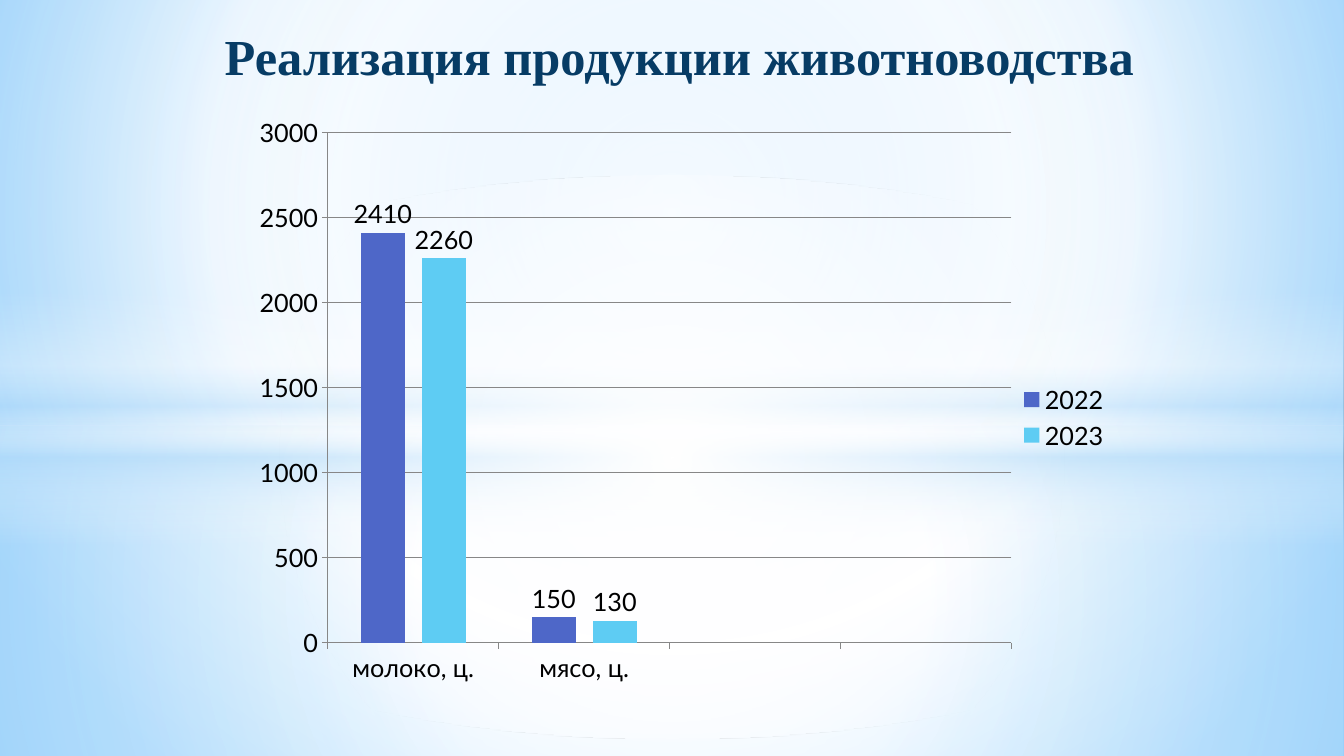
from lxml import etree
from pptx import Presentation
from pptx import util as u
from pptx.chart.data import CategoryChartData
from pptx.dml.color import RGBColor
from pptx.enum import chart as ch, shapes, text
from pptx.oxml import parse_xml
from pptx.oxml.ns import nsdecls, qn

SCALE = 914400 / 100.8
WIDE, HIGH = 1344, 756
NAVY = RGBColor(0x07, 0x3C, 0x65)
BLACK = RGBColor(0, 0, 0)
GRAY = RGBColor(0x87, 0x87, 0x87)
BLUE = RGBColor(0x4E, 0x67, 0xC8)
CYAN = RGBColor(0x5E, 0xCC, 0xF3)
WHITE = RGBColor(0xFF, 0xFF, 0xFF)
PALE = RGBColor(0xB4, 0xDC, 0xFA)
SKY = RGBColor(0x9E, 0xD5, 0xFF)
DEEP = RGBColor(0x5B, 0xB9, 0xFF)
MIDDLE = (50, 50, 50, 50)


def px(n):
    return u.Emu(round(n * SCALE))


def place(box):
    return [px(n) for n in box]


def blend(holder, stops, focus=None):
    marks = "".join(
        f'<a:gs pos="{pos * 1000}"><a:srgbClr val="{color}">'
        f'<a:alpha val="{alpha * 1000}"/></a:srgbClr></a:gs>'
        for pos, color, alpha in stops)
    if focus:
        sides = " ".join(f'{side}="{n * 1000}"' for side, n in zip("ltrb", focus))
        way = f'<a:path path="circle"><a:fillToRect {sides}/></a:path>'
    else:
        way = '<a:lin ang="5400000" scaled="0"/>'
    fill = parse_xml(f'<a:gradFill {nsdecls("a")} rotWithShape="1">'
                     f'<a:gsLst>{marks}</a:gsLst>{way}</a:gradFill>')
    holder.replace(holder.find(qn("a:solidFill")), fill)


def glow(slide, kind, box, stops, focus=None):
    shape = slide.shapes.add_shape(kind, *place(box))
    shape.shadow.inherit = False
    shape.line.fill.background()
    shape.fill.solid()
    blend(shape.element.spPr, stops, focus)


def scene(slide, box):
    left, top, width, height = box
    slide.background.fill.solid()
    base = slide.element.xpath(".//p:bgPr")[0]
    blend(base, [(0, SKY, 100), (60, WHITE, 100), (100, DEEP, 100)], (20, 10, 20, 60))
    rect, oval = shapes.MSO_SHAPE.RECTANGLE, shapes.MSO_SHAPE.OVAL
    split = 426
    glow(slide, rect, (left, top + split, width, height - split),
         [(0, WHITE, 92), (37, WHITE, 77), (100, PALE, 80)], MIDDLE)
    glow(slide, rect, (left, top, width, split),
         [(0, WHITE, 90), (48, WHITE, 63), (100, PALE, 80)], MIDDLE)
    glow(slide, rect, (left, top + 292, width, 252),
         [(0, WHITE, 0), (29, WHITE, 30), (45, PALE, 40),
          (55, WHITE, 26), (65, PALE, 60), (100, WHITE, 0)])
    glow(slide, oval, (left, top + 176, width, 563),
         [(0, WHITE, 100), (54, WHITE, 0)], MIDDLE)


def heading(slide, box):
    title = slide.shapes.title
    title.left, title.top, title.width, title.height = place(box)
    frame = title.text_frame
    frame.text = "Реализация продукции животноводства"
    frame.word_wrap = True
    frame.auto_size = text.MSO_AUTO_SIZE.SHAPE_TO_FIT_TEXT
    line = frame.paragraphs[0]
    line.alignment = text.PP_ALIGN.CENTER
    font = line.runs[0].font
    font.name, font.size, font.bold = "Times New Roman", u.Pt(36), True
    font.color.rgb = NAVY
    slide.shapes.element.append(title.element)


def layout(chart, frame):
    area = chart.element.find(".//" + qn("c:plotArea"))
    old = area.find(qn("c:layout"))
    if old is not None:
        area.remove(old)
    node = etree.Element(qn("c:layout"))
    manual = etree.SubElement(node, qn("c:manualLayout"))
    rules = [("layoutTarget", "inner"), ("xMode", "edge"), ("yMode", "edge")]
    for name, value in rules + list(zip("xywh", frame)):
        etree.SubElement(manual, qn("c:" + name)).set("val", str(value))
    area.insert(0, node)


def sales(slide, box):
    data = CategoryChartData()
    data.categories = ["молоко, ц.", "мясо, ц.", "", ""]
    data.add_series("2022", (2410, 150, None, None))
    data.add_series("2023", (2260, 130, None, None))
    chart = slide.shapes.add_chart(
        ch.XL_CHART_TYPE.COLUMN_CLUSTERED, *place(box), data).chart
    chart.font.name, chart.font.size = "Lato", u.Pt(18)
    chart.font.color.rgb = BLACK
    chart.has_title = False
    chart.has_legend = True
    chart.legend.position = ch.XL_LEGEND_POSITION.RIGHT
    chart.legend.include_in_layout = False
    layout(chart, (0.116, 0.032, 0.763, 0.838))

    plot = chart.plots[0]
    plot.gap_width, plot.overlap = 150, -39
    plot.vary_by_categories = False
    for series, color in zip(plot.series, (BLUE, CYAN)):
        series.format.fill.solid()
        series.format.fill.fore_color.rgb = color
        labels = series.data_labels
        labels.show_value = True
        labels.position = ch.XL_LABEL_POSITION.OUTSIDE_END

    scale = chart.value_axis
    scale.minimum_scale, scale.maximum_scale, scale.major_unit = 0, 3000, 500
    scale.has_major_gridlines = True
    for part in (scale, scale.major_gridlines, chart.category_axis):
        part.format.line.color.rgb = GRAY
        part.format.line.width = u.Pt(0.75)
    for axis in (scale, chart.category_axis):
        axis.major_tick_mark = ch.XL_TICK_MARK.OUTSIDE


def main():
    deck = Presentation()
    deck.slide_width, deck.slide_height = px(WIDE), px(HIGH)
    slide = deck.slides.add_slide(deck.slide_layouts[5])
    scene(slide, (0, 0, WIDE, HIGH))
    sales(slide, (224, 113, 896, 609))
    heading(slide, (91, 19, 1177, 72))
    deck.save("out.pptx")


if __name__ == "__main__":
    main()
